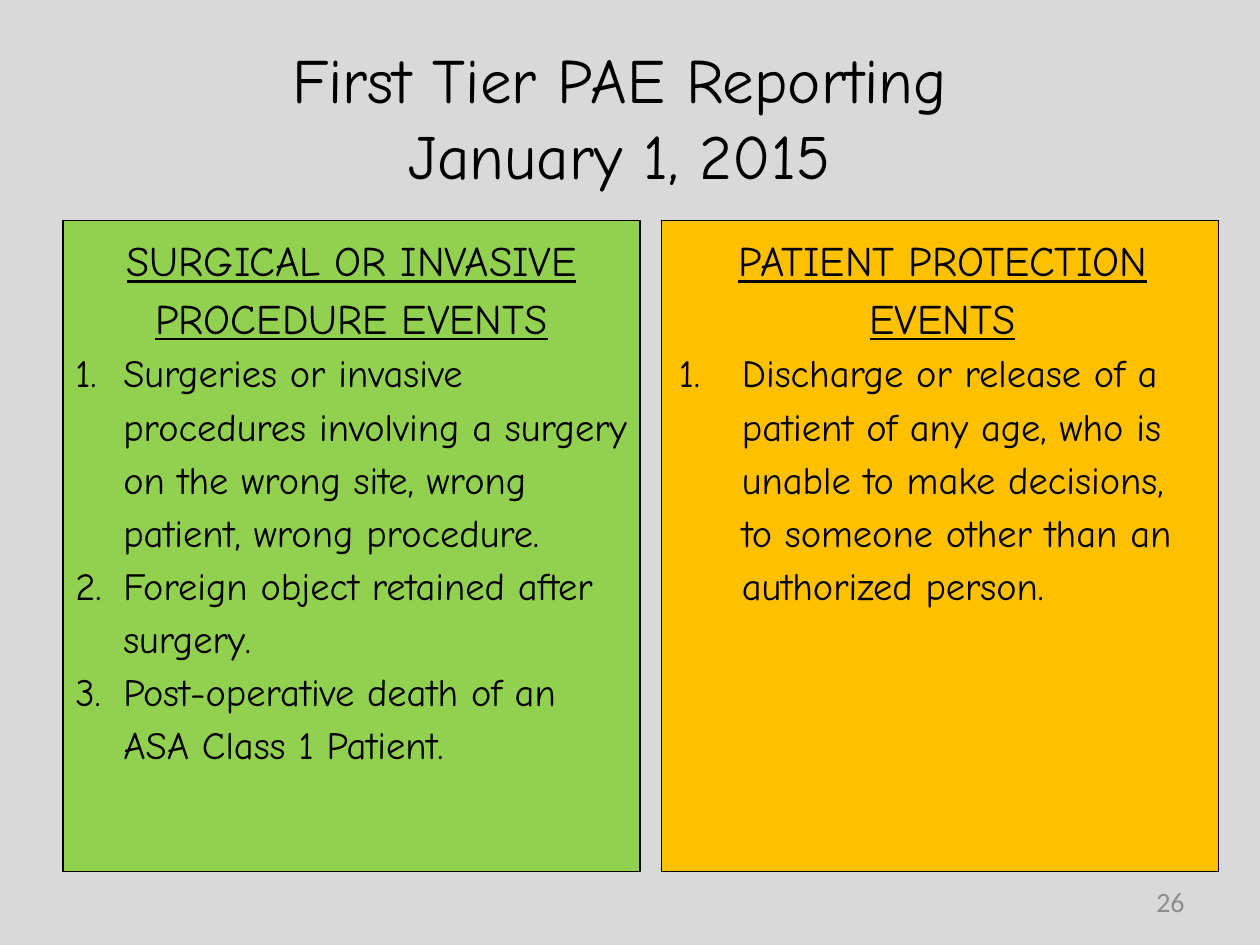
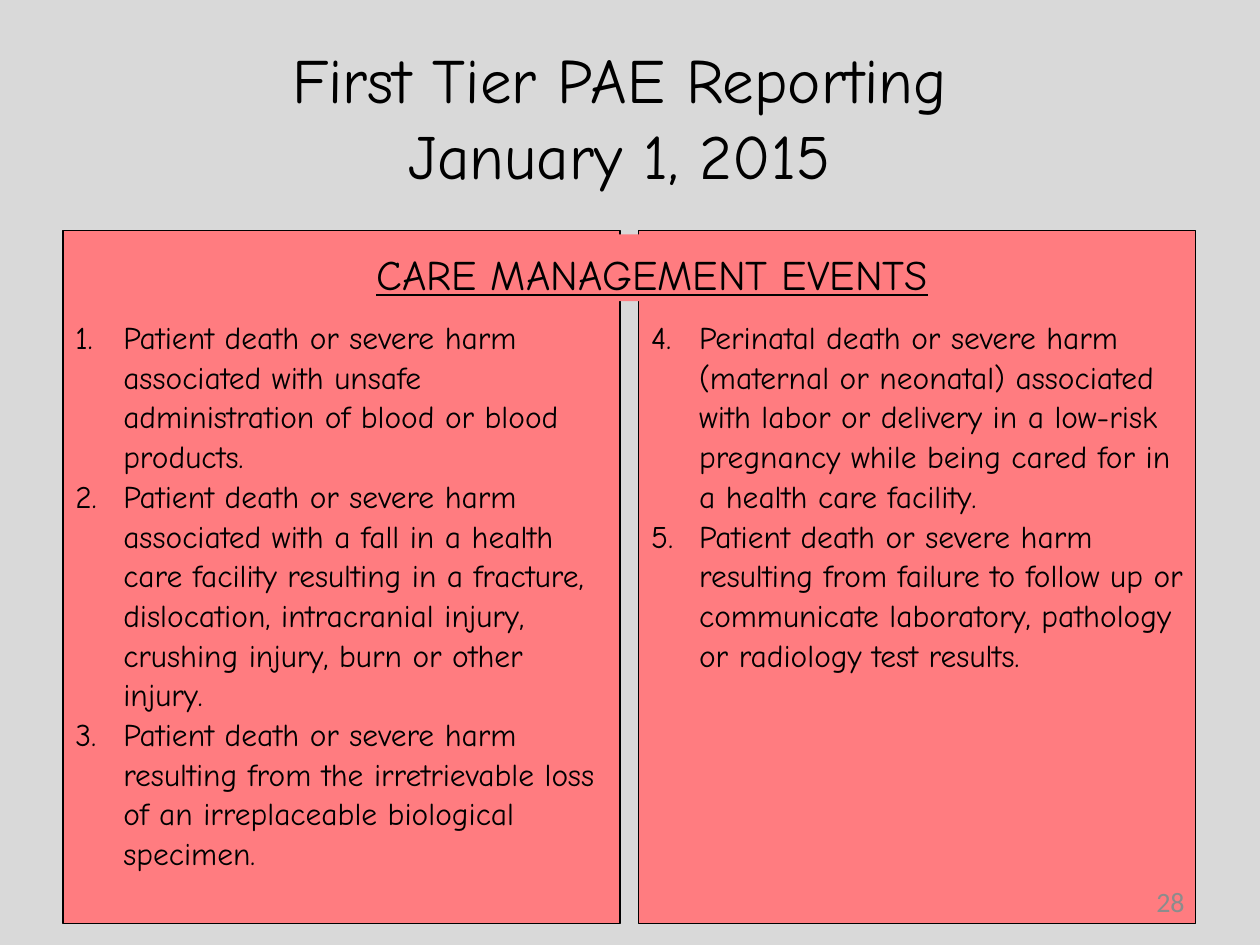
from lxml.etree import SubElement
from pptx import Presentation
from pptx.dml.color import RGBColor
from pptx.enum.shapes import MSO_SHAPE
from pptx.enum.text import MSO_ANCHOR, MSO_AUTO_SIZE, PP_ALIGN
from pptx.oxml.ns import qn
from pptx.util import Inches, Pt

COLORS = {
    "background": "D9D9D9",
    "text": "000000",
    "page": "8C8C8C",
    "surgical": "92D050",
    "protection": "FFC000",
    "care": "FF7C80",
}
BODY_FONT = "Comic Neue"
PAGE_FONT = "Calibri"
WIDTH, HEIGHT = 10, 7.5
MARGIN = 0.05 * WIDTH
PANEL_WIDTH = 4.42
HANGING = 0.38
TITLE = "First Tier PAE Reporting \vJanuary 1, 2015 "

SURGICAL_EVENTS = [
    "Surgeries or invasive procedures involving a surgery on the wrong site, "
    "wrong patient, wrong procedure.",
    "Foreign object retained after surgery.",
    "Post-operative death of an ASA Class 1 Patient.",
]
PROTECTION_EVENTS = [
    "Discharge or release of a patient of any age, who is unable to make "
    "decisions, to someone other than an authorized person.",
]
CARE_EVENTS = [
    "Patient death or severe harm associated with unsafe administration of "
    "blood or blood products.",
    "Patient death or severe harm associated with a fall in a health care "
    "facility resulting in a fracture, dislocation, intracranial injury, "
    "crushing injury, burn or other injury.",
    "Patient death or severe harm resulting from the irretrievable loss of an "
    "irreplaceable biological specimen.",
    "Perinatal death or severe harm (maternal or neonatal) associated with "
    "labor or delivery in a low-risk pregnancy while being cared for in a "
    "health care facility.",
    "Patient death or severe harm resulting from failure to follow up or "
    "communicate laboratory, pathology or radiology test results.",
]


def rgb(name):
    return RGBColor.from_string(COLORS[name])


def style(paragraph, size, align=PP_ALIGN.LEFT, color="text", name=BODY_FONT):
    paragraph.alignment = align
    font = paragraph.font
    font.size, font.name = Pt(size), name
    font.color.rgb = rgb(color)


def indent(paragraph, left, first=0.0):
    properties = paragraph._p.get_or_add_pPr()
    properties.set("marL", str(Inches(left)))
    properties.set("indent", str(Inches(first)))
    return properties


def add_label(slide, box, text, size, align, **look):
    """Add one line or block of unfilled text, centred vertically."""
    frame = slide.shapes.add_textbox(*map(Inches, box)).text_frame
    frame.word_wrap = True
    frame.vertical_anchor = MSO_ANCHOR.MIDDLE
    paragraph = frame.paragraphs[0]
    paragraph.text = text
    style(paragraph, size, align, **look)


def add_panel(slide, box, color, outlined=True):
    """Add a filled rectangle and return its text frame."""
    panel = slide.shapes.add_shape(MSO_SHAPE.RECTANGLE, *map(Inches, box))
    panel.shadow.inherit = False
    panel.fill.solid()
    panel.fill.fore_color.rgb = rgb(color)
    if outlined:
        panel.line.color.rgb = rgb("text")
        panel.line.width = Pt(0.75)
    else:
        panel.line.fill.background()
    frame = panel.text_frame
    frame.word_wrap = True
    frame.vertical_anchor = MSO_ANCHOR.TOP
    return frame


def add_heading(frame, text, left=0.0):
    heading = frame.paragraphs[0]
    heading.text = text
    heading.line_spacing = 1.15
    indent(heading, left)
    style(heading, 24, PP_ALIGN.CENTER)
    heading.font.underline = True


def add_events(frame, events, size, spacing, left=HANGING, hanging=HANGING, start=1):
    """Fill the frame with a numbered list, reusing an empty first paragraph."""
    for event in events:
        first = frame.paragraphs[0]
        paragraph = frame.add_paragraph() if first.text else first
        paragraph.text = event
        paragraph.line_spacing = spacing
        properties = indent(paragraph, left, -hanging)
        number = SubElement(properties, qn("a:buAutoNum"), type="arabicPeriod")
        if start > 1:
            number.set("startAt", str(start))
        style(paragraph, size)


def add_base(deck):
    """Add a blank slide with the shared background and title."""
    slide = deck.slides.add_slide(deck.slide_layouts[6])
    slide.background.fill.solid()
    slide.background.fill.fore_color.rgb = rgb("background")
    title_box = (MARGIN, 0.04 * HEIGHT, WIDTH - 2 * MARGIN, HEIGHT / 6)
    add_label(slide, title_box, TITLE, 36, PP_ALIGN.CENTER)
    return slide


def add_page_number(slide, number):
    add_label(slide, (7.17, 6.95, 2.33, 0.4), str(number), 16, PP_ALIGN.RIGHT,
              color="page", name=PAGE_FONT)


def add_surgical_and_protection(deck):
    slide = add_base(deck)
    top, height = 1.75, 5.17
    surgical = add_panel(slide, (MARGIN, top, 4.58, height), "surgical")
    add_heading(surgical, "SURGICAL OR INVASIVE PROCEDURE EVENTS")
    add_events(surgical, SURGICAL_EVENTS, 22, 1.15)

    protection = add_panel(slide, (5.25, top, PANEL_WIDTH, height), "protection")
    add_heading(protection, "PATIENT PROTECTION EVENTS", left=0.04)
    add_events(protection, PROTECTION_EVENTS, 22, 1.15, left=0.54, hanging=0.5)
    add_page_number(slide, 26)


def add_care_management(deck):
    slide = add_base(deck)
    gap, split = 0.15, 3
    columns = ((CARE_EVENTS[:split], 1), (CARE_EVENTS[split:], split + 1))
    for column, (events, start) in enumerate(columns):
        left = MARGIN + column * (PANEL_WIDTH + gap)
        frame = add_panel(slide, (left, 1.83, PANEL_WIDTH, 5.5), "care")
        frame.margin_top = Inches(0.68)
        add_events(frame, events, 18, 1.05, start=start)
    add_page_number(slide, 28)

    banner = add_panel(slide, (2.1, 1.86, 5.65, 0.53), "care", outlined=False)
    banner.word_wrap = False
    banner.auto_size = MSO_AUTO_SIZE.SHAPE_TO_FIT_TEXT
    add_heading(banner, "CARE MANAGEMENT EVENTS", left=0.5)


def main():
    deck = Presentation()
    deck.slide_width, deck.slide_height = Inches(WIDTH), Inches(HEIGHT)
    add_surgical_and_protection(deck)
    add_care_management(deck)
    deck.save("out.pptx")


if __name__ == "__main__":
    main()
